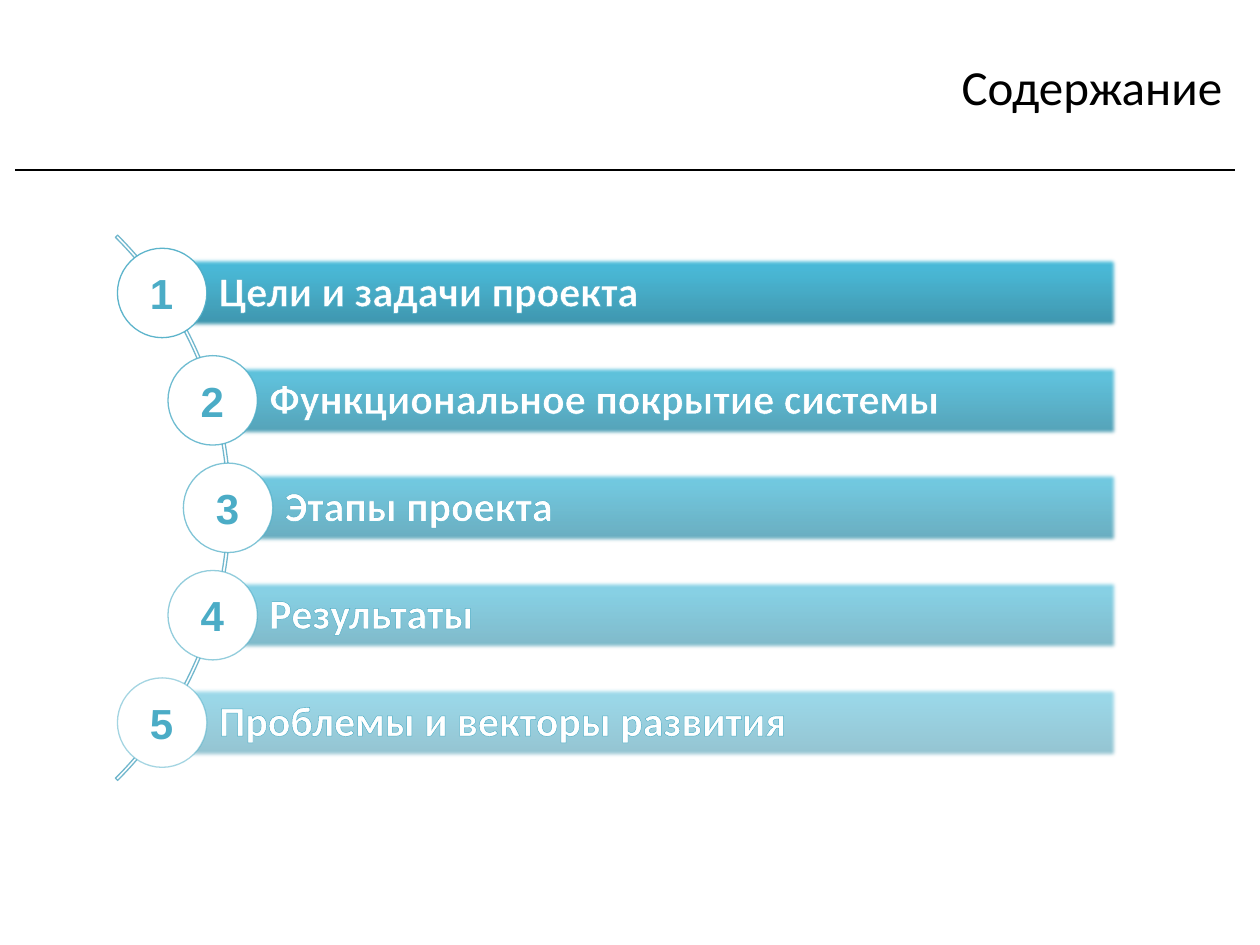
import math

from lxml import etree
from pptx import Presentation, util as u
from pptx.dml.color import RGBColor
from pptx.enum import shapes, text
from pptx.oxml.ns import qn

WIDTH, HEIGHT = 10, 7.5
ACCENT, WHITE, BLACK = "4BACC6", "FFFFFF", "000000"
BAR_STOPS = [(0, "2A88A2"), (80, "37B1D2"), (100, "34B4D6")]
NUMBER_STOPS = [(0, "215968"), (50, ACCENT), (100, "93CDDD")]
ITEMS = [
    "Цели и задачи проекта",
    "Функциональное покрытие системы",
    "Этапы проекта",
    "Результаты",
    "Проблемы и векторы развития",
]


def color(value):
    return RGBColor.from_string(value)


def inches(*values):
    return [u.Inches(value) for value in values]


def apply(target, values):
    for name, value in values.items():
        setattr(target, name, value)


def add_child(parent, tag, **attributes):
    return etree.SubElement(parent, qn(tag), attributes)


def set_gradient(fill, properties, stops, angle, opacity=100):
    fill.gradient()
    gradient = properties.find(qn("a:gradFill"))
    for child in list(gradient):
        gradient.remove(child)
    stop_list = add_child(gradient, "a:gsLst")
    for position, value in stops:
        stop = add_child(stop_list, "a:gs", pos=str(position * 1000))
        tone = add_child(stop, "a:srgbClr", val=value)
        if opacity < 100:
            add_child(tone, "a:alpha", val=str(opacity * 1000))
    add_child(gradient, "a:lin", ang=str(angle * 60000), scaled="0")


def set_line(shape, value, opacity=100):
    shape.line.color.rgb = color(value)
    shape.line.width = u.Pt(0.75)
    if opacity < 100:
        tone = next(shape.line._get_or_add_ln().iter(qn("a:srgbClr")))
        add_child(tone, "a:alpha", val=str(opacity * 1000))


def add_shape(slide, kind, box):
    shape = slide.shapes.add_shape(kind, *inches(*box))
    shape.shadow.inherit = False
    return shape


def add_text(slide, box, content, frame_format, font_format):
    frame = slide.shapes.add_textbox(*inches(*box)).text_frame
    apply(frame, frame_format)
    paragraph = frame.paragraphs[0]
    run = paragraph.add_run()
    run.text = content
    apply(run.font, {"size": u.Pt(24), "bold": True, **font_format})
    return paragraph, run


def add_heading(slide, box):
    left, top, width, height = box
    title = slide.shapes.title
    apply(title, dict(zip(("left", "top", "width", "height"),
                          inches(left + 2.56, top, width - 2.56, height - 0.09))))
    title.text_frame.text = "Содержание"
    title.text_frame.vertical_anchor = text.MSO_ANCHOR.MIDDLE
    paragraph = title.text_frame.paragraphs[0]
    paragraph.alignment = text.PP_ALIGN.RIGHT
    apply(paragraph.runs[0].font, {"name": "Calibri", "size": u.Pt(28)})
    paragraph.runs[0].font.color.rgb = color(BLACK)
    bottom = top + height
    rule = slide.shapes.add_connector(
        shapes.MSO_CONNECTOR.STRAIGHT, *inches(left, bottom, left + width, bottom))
    set_line(rule, BLACK)
    add_child(rule._element.spPr, "a:effectLst")


def add_bar(slide, box, label, opacity):
    bar = add_shape(slide, shapes.MSO_SHAPE.RECTANGLE, box)
    bar.line.fill.background()
    properties = bar._element.spPr
    set_gradient(bar.fill, properties, BAR_STOPS, 270, opacity)
    add_child(properties.find(qn("a:effectLst")), "a:softEdge", rad="31750")
    margins = dict(zip(("margin_left", "margin_top", "margin_right", "margin_bottom"),
                       inches(0.45, 0.07, 0.07, 0.07)))
    paragraph, run = add_text(
        slide, box, label,
        {"word_wrap": True, "vertical_anchor": text.MSO_ANCHOR.MIDDLE, **margins},
        {"name": "Calibri"})
    paragraph.line_spacing = 0.9
    run.font.color.rgb = color(WHITE)
    outline = etree.Element(qn("a:ln"), w=str(u.Pt(0.8)))
    add_child(add_child(outline, "a:solidFill"), "a:srgbClr", val=ACCENT)
    run.font._element.insert(0, outline)


def add_badge(slide, box, opacity):
    circle = add_shape(slide, shapes.MSO_SHAPE.OVAL, box)
    circle.fill.solid()
    circle.fill.fore_color.rgb = color(WHITE)
    set_line(circle, ACCENT, opacity)


def add_number(slide, box, number):
    left, top, size, _ = box
    _, run = add_text(
        slide, (left + (size - 0.39) / 2, top + (size - 0.5) / 2, 0.39, 0.5), str(number),
        {"word_wrap": False, "auto_size": text.MSO_AUTO_SIZE.SHAPE_TO_FIT_TEXT},
        {"name": "Arial"})
    set_gradient(run.font.fill, run.font._element, NUMBER_STOPS, 90)


def add_agenda(slide, box):
    left, top, width, height = box
    badge, bar_height, radius = 0.71, 0.57, 3.06
    right, middle = left + width, top + height / 2
    pitch = (height - badge) / (len(ITEMS) - 1)
    arc_center = left - 2.15
    arc = add_shape(slide, shapes.MSO_SHAPE.BLOCK_ARC,
                    (arc_center - radius, middle - radius, 2 * radius, 2 * radius))
    for index, value in enumerate((189, 27, 0.004)):
        arc.adjustments[index] = value
    arc.fill.background()
    set_line(arc, "71B7CD")
    badges = []
    for index, label in enumerate(ITEMS):
        y = top + badge / 2 + index * pitch
        x = arc_center + math.sqrt((radius - 0.02) ** 2 - (y - middle) ** 2)
        opacity = 90 - 10 * index
        badges.append((x - badge / 2, y - badge / 2, badge, badge))
        add_bar(slide, (x, y - bar_height / 2, right - x, bar_height), label, opacity)
        add_badge(slide, badges[-1], opacity)
    for number, badge_box in enumerate(badges, 1):
        add_number(slide, badge_box, number)


def main():
    presentation = Presentation()
    presentation.slide_width, presentation.slide_height = inches(WIDTH, HEIGHT)
    slide = presentation.slides.add_slide(presentation.slide_layouts[5])
    add_heading(slide, (0.12, 0.1, 9.68, 1.25))
    add_agenda(slide, (0.92, 1.97, 7.96, 4.12))
    presentation.save("out.pptx")


if __name__ == "__main__":
    main()
